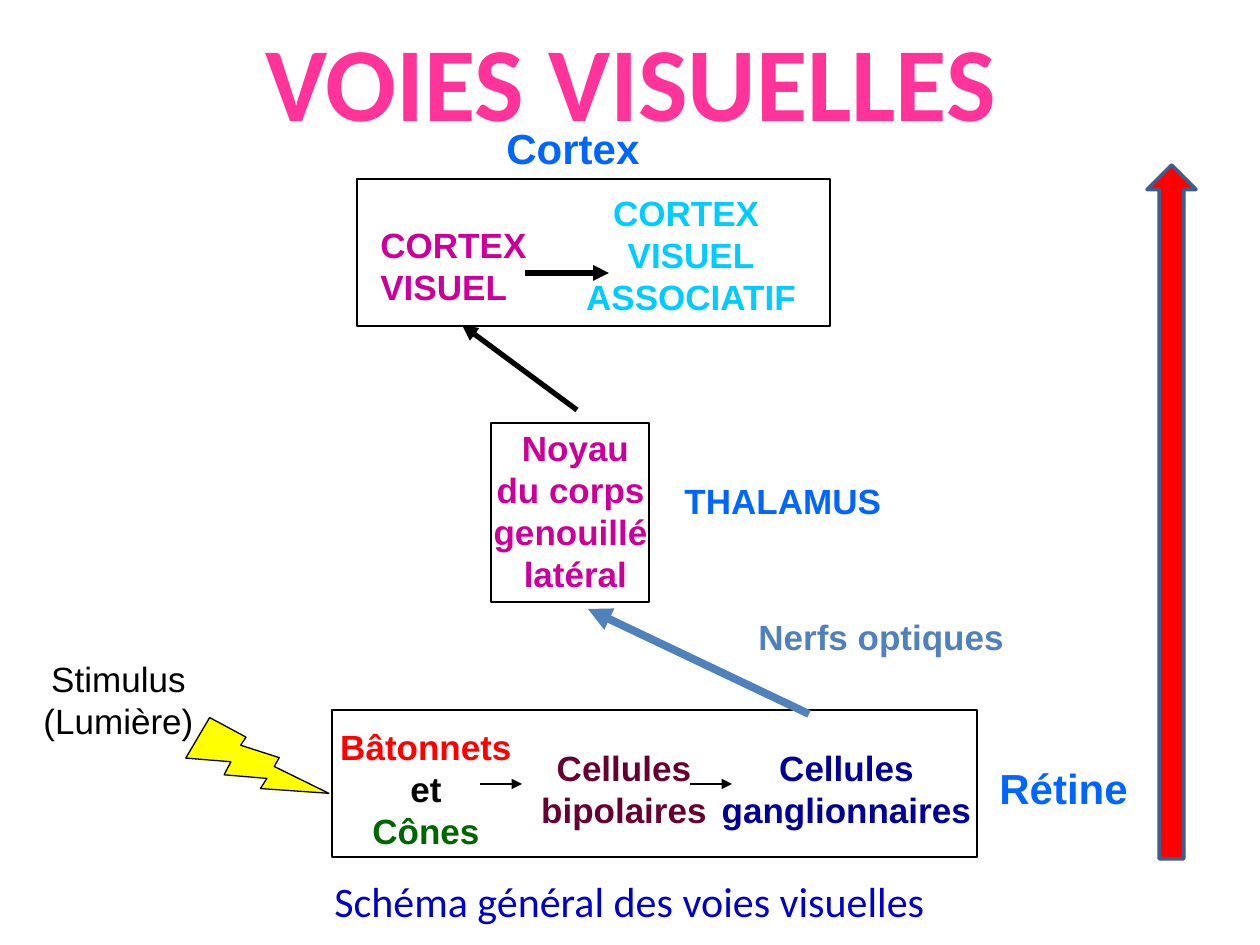
from lxml import etree
from pptx import Presentation
from pptx.dml.color import RGBColor
from pptx.enum.shapes import MSO_CONNECTOR, MSO_SHAPE
from pptx.enum.text import MSO_ANCHOR, MSO_AUTO_SIZE, PP_ALIGN
from pptx.oxml.ns import qn
from pptx.util import Emu, Pt

RECTANGLE = MSO_SHAPE.RECTANGLE
LIGHTNING = MSO_SHAPE.LIGHTNING_BOLT
DOWN_ARROW = MSO_SHAPE.DOWN_ARROW
STRAIGHT = MSO_CONNECTOR.STRAIGHT
LEFT, CENTER = PP_ALIGN.LEFT, PP_ALIGN.CENTER
TOP, MIDDLE = MSO_ANCHOR.TOP, MSO_ANCHOR.MIDDLE
FIXED, GROW = MSO_AUTO_SIZE.NONE, MSO_AUTO_SIZE.SHAPE_TO_FIT_TEXT

BLACK = RGBColor(0x00, 0x00, 0x00)
PINK = RGBColor(0xFF, 0x33, 0x99)
CAPTION_BLUE = RGBColor(0x00, 0x00, 0xCC)
REGION_BLUE = RGBColor(0x00, 0x66, 0xFF)
NERVE_BLUE = RGBColor(0x4F, 0x81, 0xBD)
ARROW_EDGE = RGBColor(0x3A, 0x5F, 0x8C)
MAGENTA = RGBColor(0xCC, 0x00, 0x99)
CYAN = RGBColor(0x00, 0xCC, 0xFF)
RED = RGBColor(0xFF, 0x00, 0x00)
GREEN = RGBColor(0x00, 0x66, 0x00)
MAROON = RGBColor(0x66, 0x00, 0x33)
NAVY = RGBColor(0x00, 0x00, 0x99)
YELLOW = RGBColor(0xFF, 0xFF, 0x00)

EMU_PER_PX = 914400 / 126


def px(*lengths):
    return [Emu(round(length * EMU_PER_PX)) for length in lengths]


def add_text(slide, box, lines, colors, size=20, bold=True, align=CENTER,
             font="Arial", anchor=TOP, wrap=False):
    """One paragraph per line; colors is one colour or one for each line."""
    if isinstance(colors, RGBColor):
        colors = [colors] * len(lines)
    frame = slide.shapes.add_textbox(*px(*box)).text_frame
    frame.word_wrap = wrap
    frame.auto_size = FIXED if wrap else GROW
    frame.vertical_anchor = anchor
    frame.text = "\n".join(lines)
    for paragraph, color in zip(frame.paragraphs, colors):
        paragraph.alignment = align
        run_font = paragraph.runs[0].font
        run_font.name = font
        run_font.size = Pt(size)
        run_font.bold = bold
        run_font.color.rgb = color


def add_figure(slide, kind, box, fill=None, line=BLACK, width=0.75, rotation=0):
    figure = slide.shapes.add_shape(kind, *px(*box))
    figure.shadow.inherit = False
    figure.rotation = rotation
    if fill is None:
        figure.fill.background()
    else:
        figure.fill.solid()
        figure.fill.fore_color.rgb = fill
    figure.line.color.rgb = line
    figure.line.width = Pt(width)


def add_arrow(slide, start, end, color=BLACK, width=0.75):
    arrow = slide.shapes.add_connector(STRAIGHT, *px(*start, *end))
    arrow.line.color.rgb = color
    arrow.line.width = Pt(width)
    properties = arrow._element.spPr
    etree.SubElement(properties.find(qn("a:ln")), qn("a:tailEnd"), type="triangle")
    etree.SubElement(properties, qn("a:effectLst"))


def add_retina(slide):
    add_text(slide, (325, 719, 202, 139), ["Bâtonnets", "et", "Cônes"],
             [RED, BLACK, GREEN])
    add_text(slide, (525, 740, 198, 97), ["Cellules", "bipolaires"], MAROON)
    add_text(slide, (707, 740, 279, 97), ["Cellules", "ganglionnaires"], NAVY)
    add_figure(slide, RECTANGLE, (332, 710, 645, 147))
    for start in (480, 690):
        add_arrow(slide, (start, 784), (start + 42, 784))
    add_text(slide, (987, 756, 154, 63), ["Rétine"], REGION_BLUE, 24, align=LEFT)


def add_thalamus(slide):
    add_text(slide, (481, 420, 189, 180),
             ["Noyau", "du corps ", "genouillé ", "latéral"], MAGENTA)
    add_figure(slide, RECTANGLE, (491, 423, 158, 179))
    add_text(slide, (672, 473, 222, 54), ["THALAMUS"], REGION_BLUE, align=LEFT)


def add_cortex(slide):
    add_text(slide, (368, 217, 181, 97), ["CORTEX", "VISUEL"], MAGENTA, align=LEFT)
    add_text(slide, (572, 185, 238, 139), ["CORTEX ", "VISUEL", "ASSOCIATIF"], CYAN)
    add_text(slide, (494, 116, 159, 63), ["Cortex"], REGION_BLUE, 24, align=LEFT)
    add_figure(slide, RECTANGLE, (357, 179, 473, 147))
    add_arrow(slide, (525, 273), (609, 273), width=3)


def main():
    deck = Presentation()
    deck.slide_width, deck.slide_height = px(1260, 945)
    slide = deck.slides.add_slide(deck.slide_layouts[6])

    # Caption below the diagram
    add_text(slide, (94, 853, 1071, 96), ["Schéma général des voies visuelles"],
             CAPTION_BLUE, 24, False, font="Calibri", anchor=MIDDLE, wrap=True)

    # Light stimulus
    add_text(slide, (31, 651, 175, 97), ["Stimulus", "(Lumière)"], BLACK, bold=False)
    add_figure(slide, LIGHTNING, (199, 703, 105, 126), YELLOW, rotation=329.3)

    # Stages of the pathway and the nerves between them
    add_thalamus(slide)
    add_retina(slide)
    add_text(slide, (746, 609, 271, 54), ["Nerfs optiques"], NERVE_BLUE, align=LEFT)
    add_arrow(slide, (809, 714), (588, 609), NERVE_BLUE, 4.5)
    add_arrow(slide, (577, 410), (462, 325), width=3)
    add_cortex(slide)

    # Overall direction
    add_figure(slide, DOWN_ARROW, (1147, 165, 49, 694), RED, ARROW_EDGE, 2, 180)

    # Title
    add_text(slide, (64, 0, 1134, 158), ["VOIES VISUELLES"], PINK, 60,
             font="Calibri", anchor=MIDDLE, wrap=True)

    deck.save("out.pptx")


if __name__ == "__main__":
    main()
